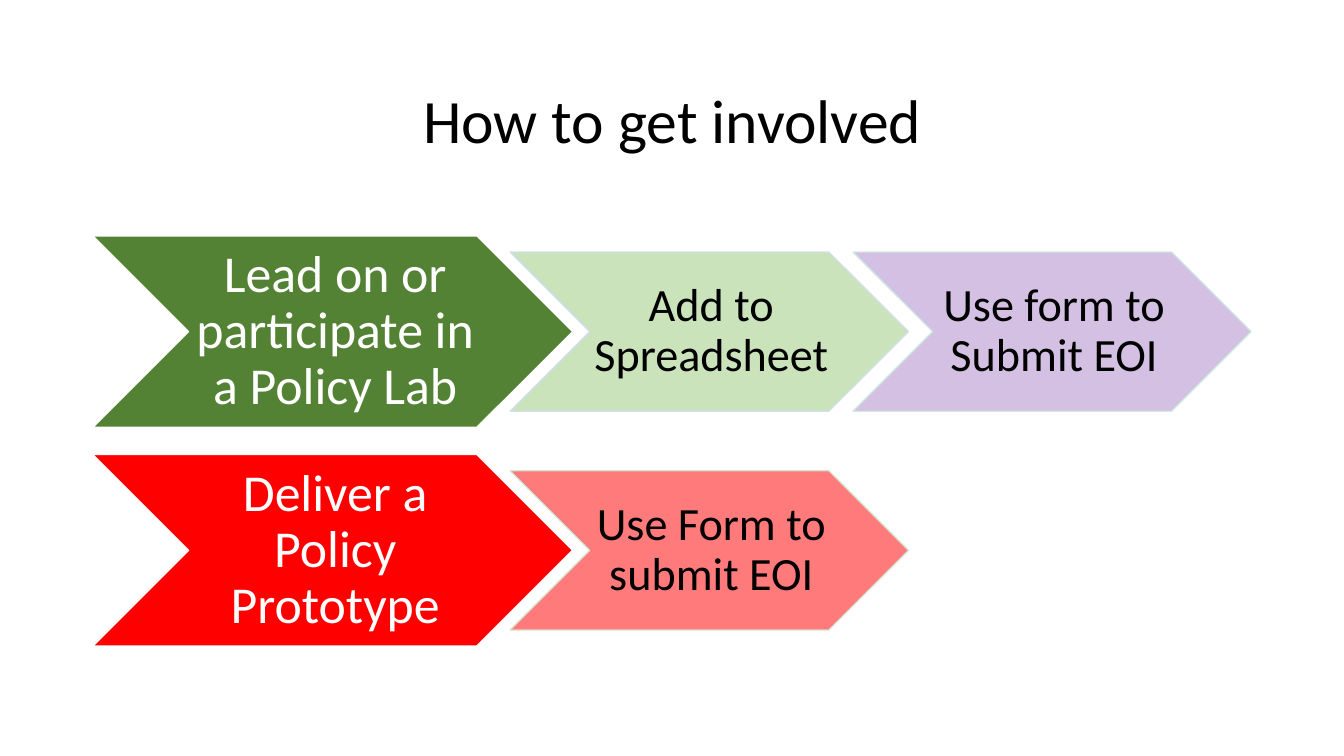
from lxml import etree
from pptx import Presentation
from pptx.dml.color import RGBColor
from pptx.enum import shapes, text
from pptx.oxml import ns
from pptx.util import Pt

PX = 9144  # 100 px to the inch
FONT = "Calibri"
COLORS = {
    "black": "000000", "white": "FFFFFF",
    "green": "548235", "light green": "C5E0B4", "purple": "7030A0", "red": "FF0000",
    "blue edge": "D2DEEF", "teal edge": "D0EAE1", "sage edge": "D5E3CF",
}

# Each chevron: wording, fill, fill opacity %, edge, edge opacity %
ROWS = [
    [("Lead on or participate in a Policy Lab", "green", 100, "white", 100),
     ("Add to Spreadsheet", "light green", 90, "blue edge", 90),
     ("Use form to Submit EOI", "purple", 30, "teal edge", 90)],
    [("Deliver a Policy Prototype", "red", 100, "white", 100),
     ("Use Form to submit EOI", "red", 52, "sage edge", 90)],
]
LEAD_WIDTH, LEAD_HEIGHT = 476, 190
STEP_WIDTH, STEP_HEIGHT = 395, 158
FIRST_STEP, STEP_PITCH, ROW_PITCH = 414, 340, 217


def emu(*lengths):
    return [length * PX for length in lengths]


def paint(fill, color, opacity):
    fill.solid()
    fill.fore_color.rgb = RGBColor.from_string(COLORS[color])
    if opacity < 100:
        color_element = fill._xPr.find(ns.qn("a:solidFill"))[0]
        etree.SubElement(color_element, ns.qn("a:alpha"), val=str(opacity * 1000))


def write(shape, wording, size, color, insets):
    frame = shape.text_frame
    frame.word_wrap = True
    frame.vertical_anchor = text.MSO_ANCHOR.MIDDLE
    (frame.margin_left, frame.margin_top,
     frame.margin_right, frame.margin_bottom) = emu(*insets)
    paragraph = frame.paragraphs[0]
    paragraph.alignment = text.PP_ALIGN.CENTER
    paragraph.line_spacing = 0.9
    run = paragraph.add_run()
    run.text = wording
    run.font.name = FONT
    run.font.size = Pt(size)
    run.font.color.rgb = RGBColor.from_string(COLORS[color])


def add_title(slide, box):
    title = slide.shapes.add_textbox(*emu(*box))
    write(title, "How to get involved", 44, "black", (10, 5, 10, 5))


def add_chevron(slide, box, entry, size, color, insets):
    wording, fill, fill_opacity, edge, edge_opacity = entry
    chevron = slide.shapes.add_shape(shapes.MSO_SHAPE.CHEVRON, *emu(*box))
    chevron.shadow.inherit = False
    paint(chevron.fill, fill, fill_opacity)
    paint(chevron.line.fill, edge, edge_opacity)
    chevron.line.width = Pt(1)
    write(chevron, wording, size, color, insets)


def add_process_row(slide, left, top, entries):
    lead, *steps = entries
    add_chevron(slide, (left, top, LEAD_WIDTH, LEAD_HEIGHT), lead, 37, "white", (5, 3, 0, 3))
    step_top = top + (LEAD_HEIGHT - STEP_HEIGHT) // 2
    for index, step in enumerate(steps):
        step_left = left + FIRST_STEP + index * STEP_PITCH
        add_chevron(slide, (step_left, step_top, STEP_WIDTH, STEP_HEIGHT),
                    step, 33, "black", (4, 2, 0, 2))


def main():
    presentation = Presentation()
    presentation.slide_width, presentation.slide_height = emu(1333, 750)
    slide = presentation.slides.add_slide(presentation.slide_layouts[6])

    # Heading
    add_title(slide, (92, 61, 1150, 124))

    # Routes to taking part
    for index, entries in enumerate(ROWS):
        add_process_row(slide, 92, 234 + index * ROW_PITCH, entries)

    presentation.save("out.pptx")


if __name__ == "__main__":
    main()
